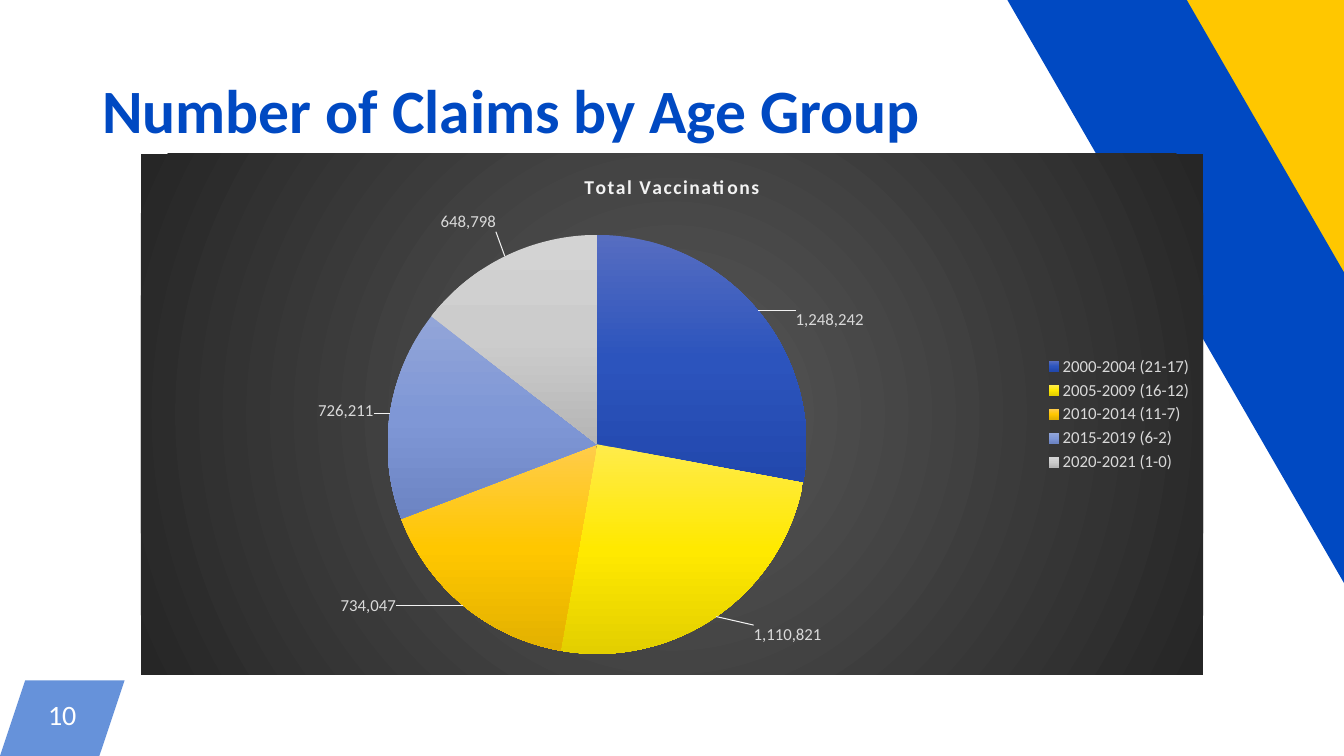
from lxml import etree
from pptx import Presentation
from pptx.chart.data import CategoryChartData
from pptx.dml.color import RGBColor
from pptx.enum.chart import XL_CHART_TYPE, XL_LABEL_POSITION, XL_LEGEND_POSITION
from pptx.enum.shapes import MSO_SHAPE
from pptx.enum.text import MSO_ANCHOR, PP_ALIGN
from pptx.oxml import parse_xml
from pptx.oxml.ns import nsdecls, qn
from pptx.util import Pt

PIE = XL_CHART_TYPE.PIE
OUTSIDE = XL_LABEL_POSITION.OUTSIDE_END
RIGHT = XL_LEGEND_POSITION.RIGHT
RECTANGLE = MSO_SHAPE.RECTANGLE
MIDDLE = MSO_ANCHOR.MIDDLE
CENTER, LEFT = PP_ALIGN.CENTER, PP_ALIGN.LEFT

BLUE = RGBColor(0x00, 0x49, 0xC2)
PALE_BLUE = RGBColor(0x66, 0x92, 0xDA)
GOLD = RGBColor(0xFF, 0xC7, 0x00)
WHITE = RGBColor(0xFF, 0xFF, 0xFF)
OFF_WHITE = RGBColor(0xF2, 0xF2, 0xF2)
LIGHT_GRAY = RGBColor(0xD9, 0xD9, 0xD9)
FONT = "Calibri"

prs = Presentation()
prs.slide_width, prs.slide_height = Pt(960), Pt(540)
slide = prs.slides.add_slide(prs.slide_layouts[6])


def gradient(colors, direction):
    step = 100000 // (len(colors) - 1)
    stops = "".join(f'<a:gs pos="{i * step}"><a:srgbClr val="{color}"/></a:gs>'
                    for i, color in enumerate(colors))
    return parse_xml(f'<a:gradFill {nsdecls("a")} rotWithShape="1">'
                     f'<a:gsLst>{stops}</a:gsLst>{direction}</a:gradFill>')


def add_text(text, box, size, color, bold, align, inset, spacing):
    left, top, width, height = box
    frame = slide.shapes.add_textbox(Pt(left), Pt(top), Pt(width), Pt(height)).text_frame
    frame.word_wrap = True
    frame.vertical_anchor = MIDDLE
    frame.margin_left = frame.margin_right = Pt(inset)
    frame.margin_top = frame.margin_bottom = Pt(3)
    paragraph = frame.paragraphs[0]
    paragraph.alignment = align
    paragraph.line_spacing = spacing
    run = paragraph.add_run()
    run.text = text
    run.font.name, run.font.size, run.font.bold = FONT, Pt(size), bold
    run.font.color.rgb = color


# Page number tab and slanted corner stripes
tab_outline = slide.shapes.build_freeform(Pt(18), Pt(486))
tab_outline.add_line_segments([(Pt(89), Pt(486)), (Pt(71), Pt(540)), (Pt(0), Pt(540))])
decorations = [(tab_outline.convert_to_shape(), PALE_BLUE)]
stripes = [
    (GOLD, 920.1, -238.3, 141.8, 330.2),
    (BLUE, 851, -140.4, 111, 330),
]
for color, left, top, width, angle in stripes:
    stripe = slide.shapes.add_shape(RECTANGLE, Pt(left), Pt(top), Pt(width), Pt(706.3))
    stripe.rotation = angle
    decorations.append((stripe, color))
for decoration, color in decorations:
    decoration.shadow.inherit = False
    decoration.fill.solid()
    decoration.fill.fore_color.rgb = color
    decoration.line.fill.background()

# Page number and title
add_text("10", (18, 486, 53, 54), 20, WHITE, False, CENTER, 3, Pt(17.7))
add_text("Number of Claims by Age Group", (66, 29, 828, 104), 44, BLUE, True, LEFT, 7.2, 0.9)

# Age groups: name, claims, slice gradient, label shift in percent of the chart
age_groups = [
    ("2000-2004 (21-17)", 1248242, ("566DC1", "2C54BD", "2248AD"), (3.1, 4.5)),
    ("2005-2009 (16-12)", 1110821, ("FFEB4B", "FFE900", "E3CF00"), (3.2, 0.7)),
    ("2010-2014 (11-7)", 734047, ("FFCC4B", "FFC700", "E3B100"), (-6, -2.7)),
    ("2015-2019 (6-2)", 726211, ("92A5D8", "7F97D6", "6C84C3"), (-1, 1.6)),
    ("2020-2021 (1-0)", 648798, ("D3D3D3", "CCCCCC", "B5B5B5"), (-0.6, -3.7)),
]
claims = CategoryChartData(number_format="#,##0")
claims.categories = [group[0] for group in age_groups]
claims.add_series("Total Vaccinations", [group[1] for group in age_groups])
chart = slide.shapes.add_chart(PIE, Pt(100.7), Pt(109.8), Pt(758.7), Pt(372.2), claims).chart
chart.font.name, chart.font.size = FONT, Pt(12)
chart.font.color.rgb = LIGHT_GRAY

# Chart title
chart.has_title = True
heading = chart.chart_title.text_frame.paragraphs[0].add_run()
heading.text = "Total Vaccinations"
heading.font.name, heading.font.size, heading.font.bold = FONT, Pt(14), True
heading.font.color.rgb = OFF_WHITE
heading.font._element.set("spc", "100")

# Legend
chart.has_legend = True
chart.legend.position = RIGHT
chart.legend.include_in_layout = False
chart.legend.font.name, chart.legend.font.size = FONT, Pt(12)
chart.legend.font.color.rgb = LIGHT_GRAY

# Dark background, lighter in the middle
background = parse_xml(f'<c:spPr {nsdecls("c", "a")}><a:ln><a:noFill/></a:ln></c:spPr>')
background.insert(0, gradient(
    ("595959", "262626"),
    '<a:path path="circle"><a:fillToRect l="50000" t="50000" r="50000" b="50000"/></a:path>'))
chart._chartSpace.find(qn("c:chart")).addnext(background)

# Pie position, in percent of the chart
pie_left, pie_top, pie_width, pie_height = 23.2, 15.6, 39.5, 80.4
plot = chart.plots[0]
plot.vary_by_categories = True
plot_area = plot._element.getparent()
for layout in plot_area.findall(qn("c:layout")):
    plot_area.remove(layout)
plot_area.insert(0, parse_xml(
    f'<c:layout {nsdecls("c")}><c:manualLayout><c:layoutTarget val="inner"/>'
    '<c:xMode val="edge"/><c:yMode val="edge"/>'
    f'<c:x val="{pie_left / 100}"/><c:y val="{pie_top / 100}"/>'
    f'<c:w val="{pie_width / 100}"/><c:h val="{pie_height / 100}"/>'
    '</c:manualLayout></c:layout>'))

# Value labels with leader lines
series = plot.series[0]
labels = series.data_labels
labels.show_value = True
labels.number_format, labels.number_format_is_linked = "#,##0", False
labels.position = OUTSIDE
labels.font.name, labels.font.size = FONT, Pt(12)
labels.font.color.rgb = LIGHT_GRAY
for tag in ("c:showLeaderLines", "c:leaderLines"):
    for old in labels._element.findall(qn(tag)):
        labels._element.remove(old)
etree.SubElement(labels._element, qn("c:showLeaderLines")).set("val", "1")
labels._element.append(parse_xml(
    f'<c:leaderLines {nsdecls("c", "a")}><c:spPr><a:ln w="9525"><a:solidFill>'
    f'<a:srgbClr val="{OFF_WHITE}"/></a:solidFill></a:ln></c:spPr></c:leaderLines>'))

# Slices and their label positions
for index, (name, value, colors, shift) in enumerate(age_groups):
    point = series.points[index]
    point.format.line.fill.background()
    slice_format = series._element.findall(qn("c:dPt"))[index].find(qn("c:spPr"))
    slice_format.insert(0, gradient(colors, '<a:lin ang="5400000" scaled="0"/>'))
    label = point.data_label
    label.position = OUTSIDE
    label.font.name, label.font.size = FONT, Pt(12)
    label.font.color.rgb = LIGHT_GRAY
    label_xml = labels._element.xpath(f'c:dLbl[c:idx/@val="{index}"]')[0]
    label_xml.find(qn("c:idx")).addnext(parse_xml(
        f'<c:layout {nsdecls("c")}><c:manualLayout><c:x val="{shift[0] / 100}"/>'
        f'<c:y val="{shift[1] / 100}"/></c:manualLayout></c:layout>'))

prs.save("out.pptx")
